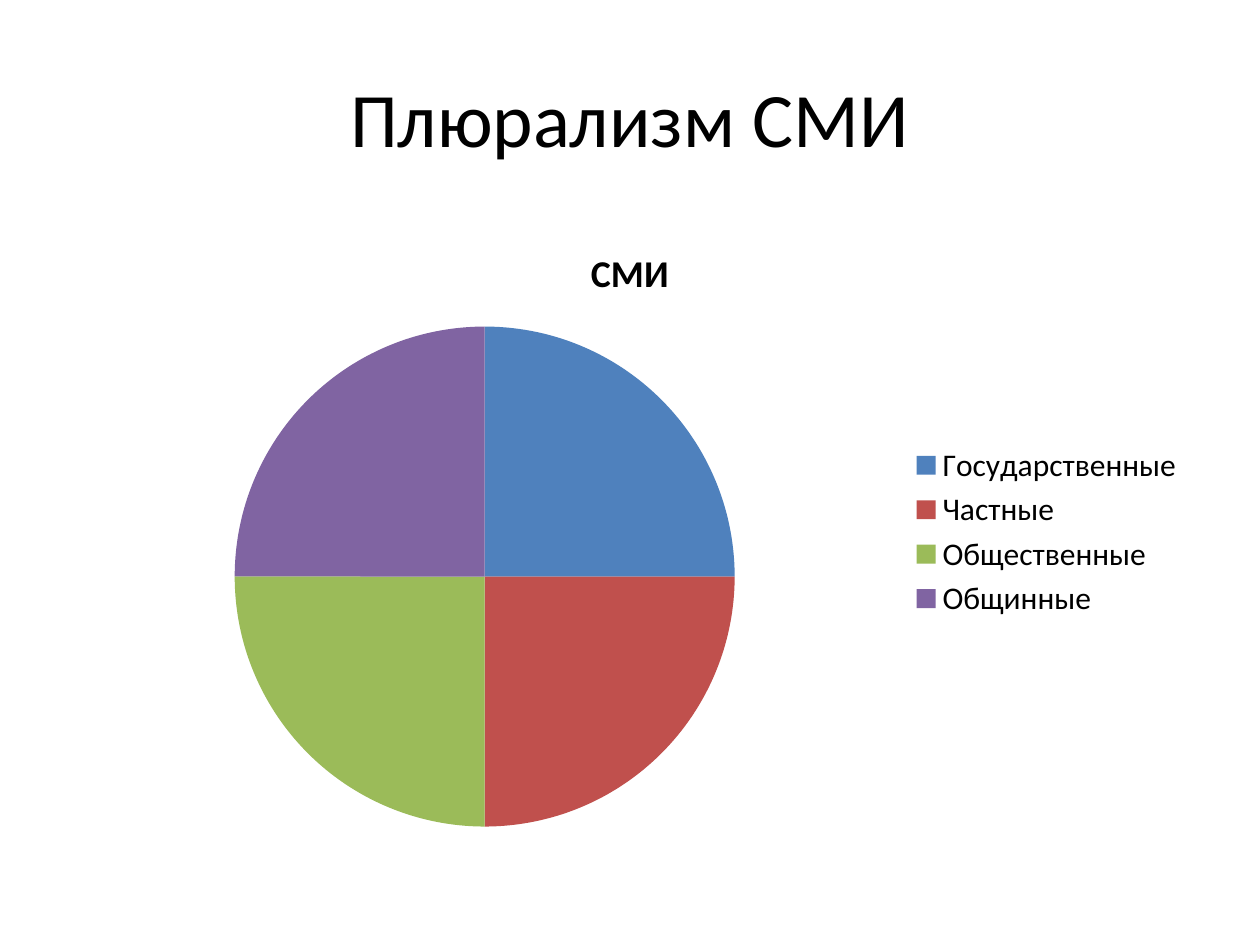
from dataclasses import dataclass

from pptx import Presentation
from pptx.chart.data import CategoryChartData
from pptx.dml.color import RGBColor
from pptx.enum.chart import XL_CHART_TYPE, XL_LEGEND_POSITION
from pptx.enum.text import MSO_ANCHOR, PP_ALIGN
from pptx.util import Pt

PIE = XL_CHART_TYPE.PIE
LEGEND_RIGHT = XL_LEGEND_POSITION.RIGHT
MIDDLE = MSO_ANCHOR.MIDDLE
CENTER = PP_ALIGN.CENTER


@dataclass(frozen=True)
class Theme:
    font: str = "Calibri"
    text: str = "000000"
    background: str = "FFFFFF"
    heading_size: float = 44
    chart_title_size: float = 21.6
    legend_size: float = 18


THEME = Theme()
MEDIA_SHARES = [
    ("Государственные", 25, "4F81BD"),
    ("Частные", 25, "C0504D"),
    ("Общественные", 25, "9BBB59"),
    ("Общинные", 25, "8064A2"),
]


def px(length):
    return round(length * 914400 / 126)


def style_font(font, size, bold=False):
    font.name = THEME.font
    font.size = Pt(size)
    font.bold = bold
    font.color.rgb = RGBColor.from_string(THEME.text)


prs = Presentation()
prs.slide_width, prs.slide_height = px(1260), px(945)
slide = prs.slides.add_slide(prs.slide_layouts[5])
slide.background.fill.solid()
slide.background.fill.fore_color.rgb = RGBColor.from_string(THEME.background)

# Heading
heading = slide.shapes.title
heading.left, heading.top = px(63), px(38)
heading.width, heading.height = px(1134), px(158)
heading.text_frame.vertical_anchor = MIDDLE
heading_line = heading.text_frame.paragraphs[0]
heading_line.alignment = CENTER
heading_run = heading_line.add_run()
heading_run.text = "Плюрализм СМИ"
style_font(heading_run.font, THEME.heading_size)

# Pie of media ownership
media_data = CategoryChartData()
media_data.categories = [name for name, _, _ in MEDIA_SHARES]
media_data.add_series("СМИ", [share for _, share, _ in MEDIA_SHARES])
media_pie = slide.shapes.add_chart(
    PIE, px(63), px(220), px(1134), px(624), media_data
).chart
style_font(media_pie.font, THEME.legend_size)

# Chart title
media_pie.has_title = True
pie_title_run = media_pie.chart_title.text_frame.paragraphs[0].add_run()
pie_title_run.text = "СМИ"
style_font(pie_title_run.font, THEME.chart_title_size, bold=True)
media_pie.chart_title.include_in_layout = False

# Legend
media_pie.has_legend = True
media_pie.legend.position = LEGEND_RIGHT
media_pie.legend.include_in_layout = False

# Slice colours
pie_plot = media_pie.plots[0]
pie_plot.vary_by_categories = True
for index, (_, _, colour) in enumerate(MEDIA_SHARES):
    slice_fill = pie_plot.series[0].points[index].format.fill
    slice_fill.solid()
    slice_fill.fore_color.rgb = RGBColor.from_string(colour)

prs.save("out.pptx")
